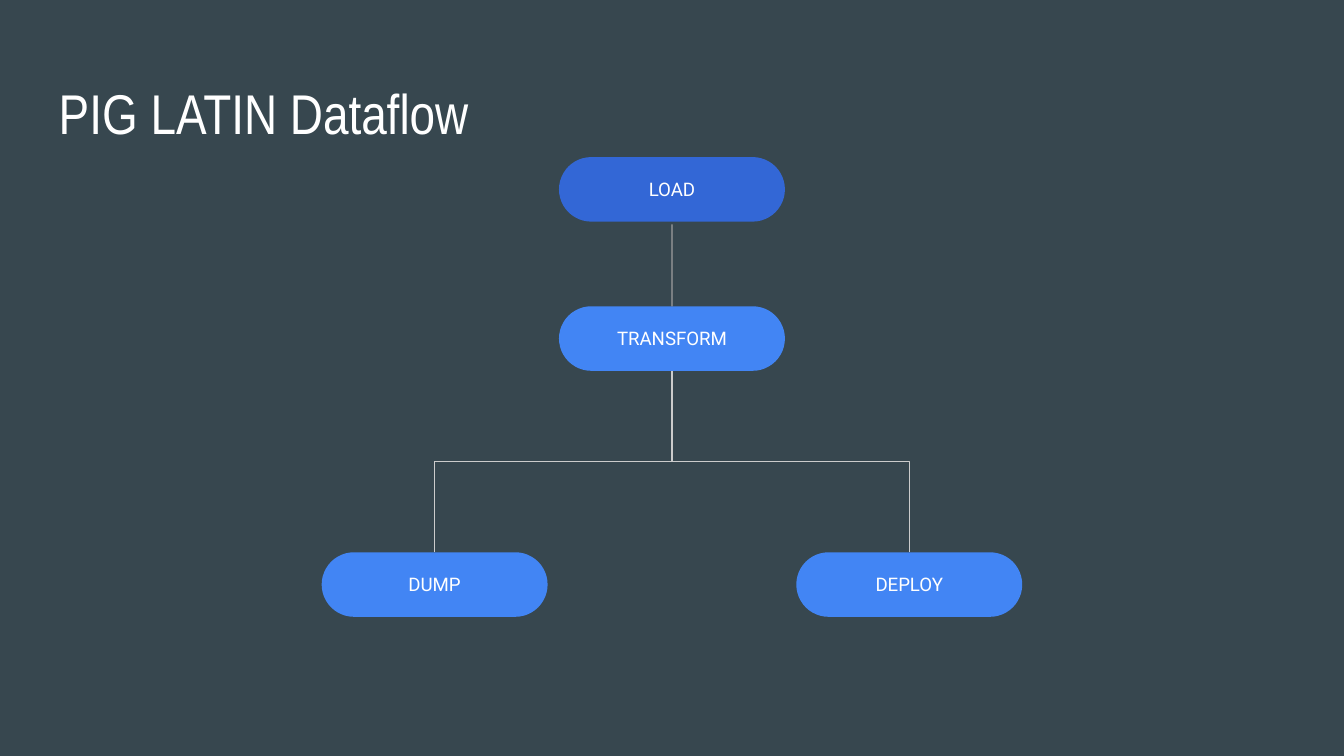
from dataclasses import dataclass

from lxml import etree
from pptx import Presentation
from pptx import util as u
from pptx.dml.color import RGBColor
from pptx.enum import shapes, text
from pptx.oxml import ns


@dataclass(frozen=True)
class Theme:
    back: str = "37474F"
    ink: str = "FFFFFF"
    root: str = "3367D6"
    node: str = "4285F4"
    stem: str = "9E9E9E"
    fork: str = "CCCCCC"
    head: str = "Arial Narrow"
    body: str = "Roboto"
    big: float = 30
    small: float = 10
    rule: float = 0.75
    inset: float = 0.25


THEME = Theme()


def paint(fill, color):
    fill.solid()
    fill.fore_color.rgb = RGBColor.from_string(color)


def write(shape, words, font, size, align, anchor):
    frame = shape.text_frame
    frame.word_wrap = True
    frame.auto_size = text.MSO_AUTO_SIZE.NONE
    frame.vertical_anchor = anchor
    frame.margin_left = frame.margin_right = u.Cm(THEME.inset)
    frame.margin_top = frame.margin_bottom = u.Cm(THEME.inset)
    para = frame.paragraphs[0]
    para.alignment = align
    run = para.add_run()
    run.text = words
    run.font.name = font
    run.font.size = u.Pt(size)
    run.font.color.rgb = RGBColor.from_string(THEME.ink)


def add_title(slide, words, left, top, width, height):
    title = slide.shapes.title
    title.left, title.top = u.Cm(left), u.Cm(top)
    title.width, title.height = u.Cm(width), u.Cm(height)
    write(title, words, THEME.head, THEME.big,
          text.PP_ALIGN.LEFT, text.MSO_ANCHOR.TOP)


def add_node(slide, words, color, mid, top, width, height):
    pill = slide.shapes.add_shape(
        shapes.MSO_SHAPE.ROUNDED_RECTANGLE,
        u.Cm(mid - width / 2), u.Cm(top), u.Cm(width), u.Cm(height))
    pill.adjustments[0] = 0.5
    pill.shadow.inherit = False
    paint(pill.fill, color)
    pill.line.fill.background()
    write(pill, words, THEME.body, THEME.small,
          text.PP_ALIGN.CENTER, text.MSO_ANCHOR.MIDDLE)
    return pill


def add_link(slide, kind, color, *ends):
    link = slide.shapes.add_connector(kind, *map(u.Cm, ends))
    paint(link.line.fill, color)
    link.line.width = u.Pt(THEME.rule)
    etree.SubElement(link._element.spPr, ns.qn("a:effectLst"))
    return link


def add_fork(slide, start, end):
    (x1, y1), (x2, y2) = start, end
    mid, level = (x1 + x2) / 2, (y1 + y2) / 2
    run, rise = (y2 - y1) / 2, abs(x2 - x1) / 2
    if x2 < x1:
        run = -run
    link = add_link(slide, shapes.MSO_CONNECTOR.ELBOW, THEME.fork,
                    mid + run, level - rise, mid - run, level + rise)
    link._element.spPr.find(ns.qn("a:xfrm")).set("rot", "16200000")


def add_flow(slide, left, top, width, height):
    wide, high, gap = 4.27, 1.22, 0.05
    mid = left + width / 2
    middle, base = top + 2.82, top + height - high
    add_node(slide, "LOAD", THEME.root, mid, top, wide, high)
    hub = add_node(slide, "TRANSFORM", THEME.node, mid, middle, wide, high)
    sides = {"DUMP": left + wide / 2, "DEPLOY": left + width - wide / 2}
    for words, x in sides.items():
        add_node(slide, words, THEME.node, x, base, wide, high)
    for x in sides.values():
        add_fork(slide, (mid, middle + high), (x, base))
    stem = add_link(slide, shapes.MSO_CONNECTOR.STRAIGHT, THEME.stem,
                    mid, top + high + gap, mid, middle)
    stem.end_connect(hub, 0)


def main():
    deck = Presentation()
    deck.slide_width, deck.slide_height = u.Cm(25.4), u.Cm(14.29)
    slide = deck.slides.add_slide(deck.slide_layouts[5])
    paint(slide.background.fill, THEME.back)
    add_title(slide, "PIG LATIN Dataflow", 0.86, 1.24, 23.67, 1.6)
    add_flow(slide, 6.08, 2.97, 13.24, 8.69)
    deck.save("out.pptx")


if __name__ == "__main__":
    main()
